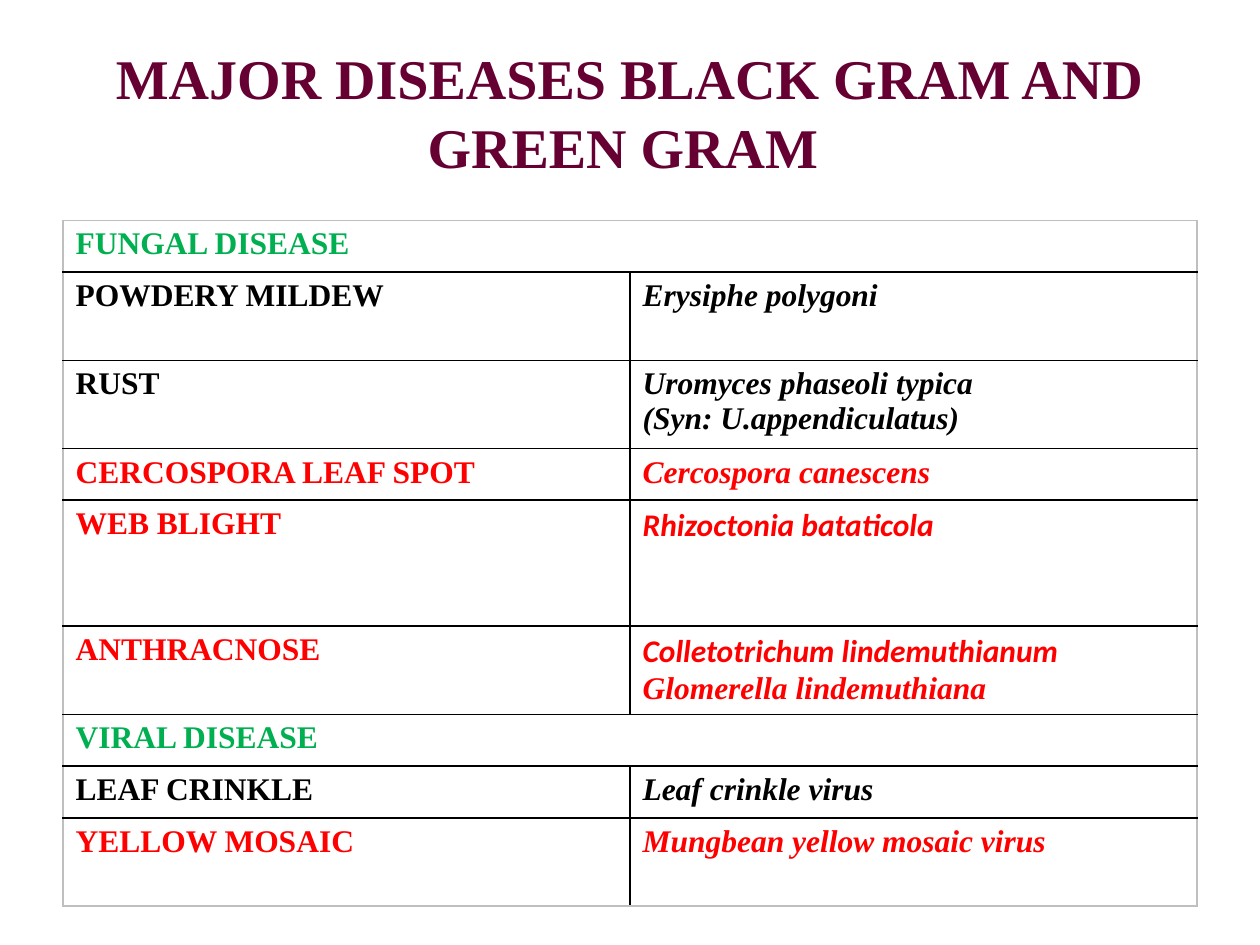
from dataclasses import dataclass

import pptx
import pptx.dml.color
import pptx.enum.text
import pptx.oxml
import pptx.oxml.ns
import pptx.util

SERIF = "Times New Roman"
SANS = "Calibri"
GREEN, BLACK, RED, PLUM, GREY = "00B050", "000000", "FF0000", "660033", "BFBFBF"
WIDTH, HEIGHT = 10, 7.5
MARGIN = WIDTH / 20
SHORT, TALL, TALLEST = 0.41, 0.7, 1


@dataclass
class Name:
    text: str
    font: str = SERIF


@dataclass
class Row:
    """A disease with its pathogen, one list of names per paragraph; a heading has none."""
    height: float
    color: str
    disease: str
    pathogen: tuple[list[Name], ...] = ()


ROWS = [
    Row(SHORT, GREEN, "FUNGAL DISEASE"),
    Row(TALL, BLACK, "POWDERY MILDEW", ([Name("Erysiphe polygoni")],)),
    Row(TALL, BLACK, "RUST",
        ([Name("Uromyces phaseoli typica")], [Name("(Syn: U.appendiculatus)")])),
    Row(SHORT, RED, "CERCOSPORA LEAF SPOT", ([Name("Cercospora canescens")],)),
    Row(TALLEST, RED, "WEB BLIGHT", ([Name("Rhizoctonia bataticola", SANS)],)),
    Row(0.68, RED, "ANTHRACNOSE",
        ([Name("Colletotrichum lindemuthianum ", SANS), Name("Glomerella lindemuthiana")],)),
    Row(SHORT, GREEN, "VIRAL DISEASE"),
    Row(SHORT, BLACK, "LEAF CRINKLE", ([Name("Leaf crinkle virus")],)),
    Row(TALL, RED, "YELLOW MOSAIC", ([Name("Mungbean yellow mosaic virus")],)),
]


def rgb(color: str) -> pptx.dml.color.RGBColor:
    return pptx.dml.color.RGBColor.from_string(color)


def add_run(paragraph, name: Name, size: float, color: str, italic: bool = False) -> None:
    run = paragraph.add_run()
    run.text = name.text
    run.font.name = name.font
    run.font.size = pptx.util.Pt(size)
    run.font.bold = True
    run.font.italic = italic
    run.font.color.rgb = rgb(color)


def add_title(slide) -> None:
    box = slide.shapes.add_textbox(
        *map(pptx.util.Inches, (MARGIN, 0.18, WIDTH - 2 * MARGIN, 1.39)))
    frame = box.text_frame
    frame.word_wrap = True
    frame.vertical_anchor = pptx.enum.text.MSO_ANCHOR.MIDDLE
    paragraph = frame.paragraphs[0]
    paragraph.alignment = pptx.enum.text.PP_ALIGN.CENTER
    paragraph.line_spacing = 1.04
    add_run(paragraph, Name("MAJOR DISEASES BLACK GRAM AND GREEN GRAM "), 32, PLUM)


def fill_cell(cell, paragraphs, color: str, italic: bool) -> None:
    for index, names in enumerate(paragraphs):
        frame = cell.text_frame
        paragraph = frame.add_paragraph() if index else frame.paragraphs[0]
        for name in names:
            add_run(paragraph, name, 18, color, italic)


def set_borders(cell, colors: dict[str, str]) -> None:
    """Draw one-point lines on the sides L, R, T and B, in that order."""
    properties = cell._tc.get_or_add_tcPr()
    for index, (side, color) in enumerate(colors.items()):
        properties.insert(index, pptx.oxml.parse_xml(
            f'<a:ln{side} {pptx.oxml.ns.nsdecls("a")} w="{pptx.util.Pt(1)}">'
            f'<a:solidFill><a:srgbClr val="{color}"/></a:solidFill></a:ln{side}>'))


def add_disease_table(slide) -> None:
    width = WIDTH - 2 * MARGIN
    total = sum(row.height for row in ROWS)
    table = slide.shapes.add_table(
        len(ROWS), 2, *map(pptx.util.Inches, (MARGIN, 1.75, width, total))).table
    table.first_row = table.horz_banding = False
    for column in table.columns:
        column.width = pptx.util.Inches(width / 2)
    last = len(ROWS) - 1
    for index, row in enumerate(ROWS):
        table.rows[index].height = pptx.util.Inches(row.height)
        left, right = table.cell(index, 0), table.cell(index, 1)
        for column, cell in enumerate((left, right)):
            cell.fill.background()
            set_borders(cell, {
                "L": BLACK if column else GREY,
                "R": GREY if column or not row.pathogen else BLACK,
                "T": BLACK if index else GREY,
                "B": BLACK if index < last else GREY,
            })
        fill_cell(left, ([Name(row.disease)],), row.color, italic=False)
        if row.pathogen:
            fill_cell(right, row.pathogen, row.color, italic=True)
        else:
            left.merge(right)


def main() -> None:
    presentation = pptx.Presentation()
    presentation.slide_width = pptx.util.Inches(WIDTH)
    presentation.slide_height = pptx.util.Inches(HEIGHT)
    slide = presentation.slides.add_slide(presentation.slide_layouts[6])
    add_title(slide)
    add_disease_table(slide)
    presentation.save("out.pptx")


if __name__ == "__main__":
    main()
